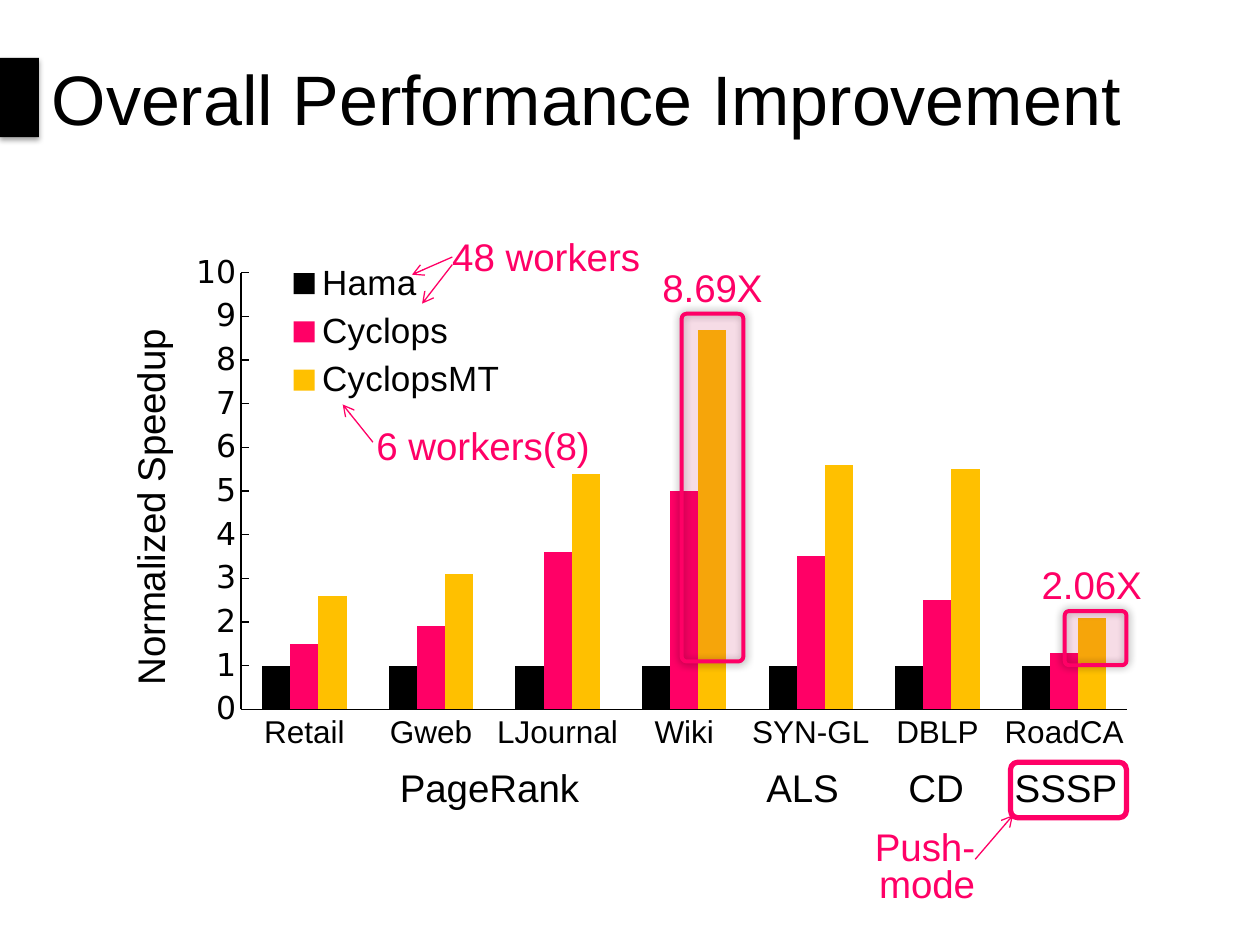
from dataclasses import dataclass

from lxml import etree
from pptx import Presentation
from pptx import util as u
from pptx.chart.data import CategoryChartData
from pptx.dml.color import RGBColor
from pptx.enum import chart as charts, shapes, text
from pptx.oxml.ns import qn


@dataclass(frozen=True)
class Theme:
    ink: str = "000000"
    accent: str = "FF0066"
    gold: str = "FFC000"
    font: str = "Arial"
    number_font: str = "DejaVu Sans"
    title: int = 40
    label: int = 22
    legend: int = 20
    axis: int = 18


def add_xml(parent, tag, **attributes):
    return etree.SubElement(parent, qn(tag), attributes)


def color(value):
    return RGBColor.from_string(value)


def place_by_shares(element, index, left, top, width=None, height=None, inner=False):
    for layout in element.findall(qn("c:layout")):
        element.remove(layout)
    layout = etree.Element(qn("c:layout"))
    element.insert(index, layout)
    manual = add_xml(layout, "c:manualLayout")
    if inner:
        add_xml(manual, "c:layoutTarget", val="inner")
    add_xml(manual, "c:xMode", val="edge")
    add_xml(manual, "c:yMode", val="edge")
    for name, share in zip("xywh", (left, top, width, height)):
        if share is not None:
            add_xml(manual, f"c:{name}", val=str(share))


class SlideBuilder:
    COLUMNS, ROWS = 100, 75

    def __init__(self, presentation, theme):
        self.theme = theme
        self.cell_width = presentation.slide_width / self.COLUMNS
        self.cell_height = presentation.slide_height / self.ROWS
        self.slide = presentation.slides.add_slide(presentation.slide_layouts[5])

    def cells(self, left, top, width, height):
        return (round(left * self.cell_width), round(top * self.cell_height),
                round(width * self.cell_width), round(height * self.cell_height))

    def set_font(self, font, size, ink=None, name=None):
        font.size = u.Pt(size)
        font.name = name or self.theme.font
        font.color.rgb = color(ink or self.theme.ink)

    def title(self, words, *box):
        shape = self.slide.shapes.title
        shape.left, shape.top, shape.width, shape.height = self.cells(*box)
        frame = shape.text_frame
        frame.text = words
        frame.vertical_anchor = text.MSO_ANCHOR.MIDDLE
        paragraph = frame.paragraphs[0]
        paragraph.alignment = text.PP_ALIGN.LEFT
        self.set_font(paragraph.font, self.theme.title)

    def label(self, words, *box, ink=None, inset_top=0, align=text.PP_ALIGN.CENTER):
        frame = self.slide.shapes.add_textbox(*self.cells(*box)).text_frame
        frame.word_wrap = False
        frame.vertical_anchor = text.MSO_ANCHOR.MIDDLE
        frame.margin_left = frame.margin_right = frame.margin_bottom = 0
        frame.margin_top = u.Inches(inset_top)
        paragraph = frame.paragraphs[0]
        paragraph.text = words
        paragraph.alignment = align
        paragraph.line_spacing = 0.8
        self.set_font(paragraph.font, self.theme.label, ink)

    def callout(self, words, *box):
        self.label(words, *box, ink=self.theme.accent, inset_top=0.06)

    def box(self, *box, fill=None, opacity=None, line=None, corner=None, shadow=None):
        kind = shapes.MSO_SHAPE.ROUNDED_RECTANGLE if corner else shapes.MSO_SHAPE.RECTANGLE
        shape = self.slide.shapes.add_shape(kind, *self.cells(*box))
        shape.shadow.inherit = False
        if corner:
            shape.adjustments[0] = corner
        if fill:
            shape.fill.solid()
            shape.fill.fore_color.rgb = color(fill)
        else:
            shape.fill.background()
        properties = shape._element.spPr
        if opacity:
            add_xml(properties.find(".//" + qn("a:srgbClr")), "a:alpha", val=str(opacity * 1000))
        if line:
            shape.line.color.rgb = color(self.theme.accent)
            shape.line.width = u.Pt(line)
        else:
            shape.line.fill.background()
        if shadow:
            alpha, blur, distance, angle = shadow
            outer = add_xml(properties.find(qn("a:effectLst")), "a:outerShdw",
                            blurRad=str(u.Pt(blur)), dist=str(u.Pt(distance)),
                            dir=str(angle * 60000), rotWithShape="0")
            shade = add_xml(outer, "a:srgbClr", val=self.theme.ink)
            add_xml(shade, "a:alpha", val=str(alpha * 1000))

    def highlight(self, *box):
        self.box(*box, fill=self.theme.accent, opacity=10, line=2.25, corner=0.08,
                 shadow=(40, 5, 0, 0))

    def arrow(self, *ends):
        connector = self.slide.shapes.add_connector(
            shapes.MSO_CONNECTOR.STRAIGHT, *self.cells(*ends))
        connector.line.color.rgb = color(self.theme.accent)
        connector.line.width = u.Pt(0.75)
        add_xml(connector.line._get_or_add_ln(), "a:tailEnd", type="arrow")
        add_xml(connector._element.spPr, "a:effectLst")

    def style_axis(self, axis, tick, font_name):
        axis.has_major_gridlines = False
        axis.major_tick_mark = tick
        axis.minor_tick_mark = charts.XL_TICK_MARK.NONE
        axis.format.line.color.rgb = color(self.theme.ink)
        axis.format.line.width = u.Pt(0.75)
        self.set_font(axis.tick_labels.font, self.theme.axis, name=font_name)

    def column_chart(self, categories, series, axis_title, *box):
        data = CategoryChartData()
        data.categories = categories
        for name, values, _ in series:
            data.add_series(name, values)
        chart = self.slide.shapes.add_chart(
            charts.XL_CHART_TYPE.COLUMN_CLUSTERED, *self.cells(*box), data).chart
        self.set_font(chart.font, self.theme.axis)
        chart.has_title = False
        plot = chart.plots[0]
        plot.gap_width = 150
        plot.overlap = 0
        plot.vary_by_categories = False
        for plotted, (_, _, fill) in zip(plot.series, series):
            plotted.format.fill.solid()
            plotted.format.fill.fore_color.rgb = color(fill)
        self.style_axis(chart.category_axis, charts.XL_TICK_MARK.NONE, self.theme.font)
        axis = chart.value_axis
        self.style_axis(axis, charts.XL_TICK_MARK.INSIDE, self.theme.number_font)
        axis.minimum_scale, axis.maximum_scale, axis.major_unit = 0, 10, 1
        axis.tick_labels.number_format = "0"
        axis.tick_labels.number_format_is_linked = False
        frame = axis.axis_title.text_frame
        frame.text = axis_title
        self.set_font(frame.paragraphs[0].font, self.theme.label)
        frame.paragraphs[0].font.bold = False
        title = axis.axis_title._element
        title.find(".//" + qn("a:bodyPr")).set("rot", "-5400000")
        place_by_shares(title, 1, 0.03, 0.16)
        chart.has_legend = True
        chart.legend.position = charts.XL_LEGEND_POSITION.RIGHT
        chart.legend.include_in_layout = True
        self.set_font(chart.legend.font, self.theme.legend)
        place_by_shares(chart.legend._element, 1, 0.16, 0.05, 0.25, 0.25)
        place_by_shares(chart._chartSpace.chart.plotArea, 0, 0.142, 0.079, 0.816, 0.71,
                        inner=True)


def main():
    presentation = Presentation()
    presentation.slide_width, presentation.slide_height = u.Inches(10), u.Inches(7.5)
    theme = Theme()
    builder = SlideBuilder(presentation, theme)

    builder.title("Overall Performance Improvement", 3.1, 0, 96.9, 15.5)
    builder.box(0, 4.6, 3.1, 6.3, fill=theme.ink, shadow=(35, 3.1, 1.8, 90))
    builder.column_chart(
        ["Retail", "Gweb", "LJournal", "Wiki", "SYN-GL", "DBLP", "RoadCA"],
        [("Hama", [1] * 7, theme.ink),
         ("Cyclops", [1.5, 1.9, 3.6, 5, 3.5, 2.5, 1.3], theme.accent),
         ("CyclopsMT", [2.6, 3.1, 5.4, 8.7, 5.6, 5.5, 2.1], theme.gold)],
        "Normalized Speedup", 6.9, 17.8, 86.2, 48.8)

    for words, left, width in (("PageRank", 30.8, 16.1), ("ALS", 59, 9.4),
                               ("CD", 69.6, 9.4), ("SSSP", 79.9, 9.4)):
        builder.label(words, left, 61.1, width, 3.5)
    builder.box(80.2, 60.5, 9.2, 4.4, line=3, corner=0.13)
    builder.label("Push-mode", 63.1, 67.2, 14.3, 3.5, ink=theme.accent,
                  align=text.PP_ALIGN.RIGHT)

    builder.highlight(54.1, 24.9, 4.9, 27.6)
    builder.highlight(84.5, 48.5, 4.9, 4.3)
    for words, left, top, width in (("8.69X", 52.2, 21.4, 8.7), ("2.06X", 82.3, 45, 8.7),
                                    ("48 workers", 35.8, 19, 15.1),
                                    ("6 workers(8)", 29.5, 34, 17.7)):
        builder.callout(words, left, top, width, 2.8)
    for ends in ((77.4, 68.2, 80.4, 64.7), (35.9, 21, 33.5, 24.1),
                 (29.6, 35.1, 27.2, 32.1), (35.9, 20.4, 32.7, 21.8)):
        builder.arrow(*ends)

    presentation.save("out.pptx")


if __name__ == "__main__":
    main()
